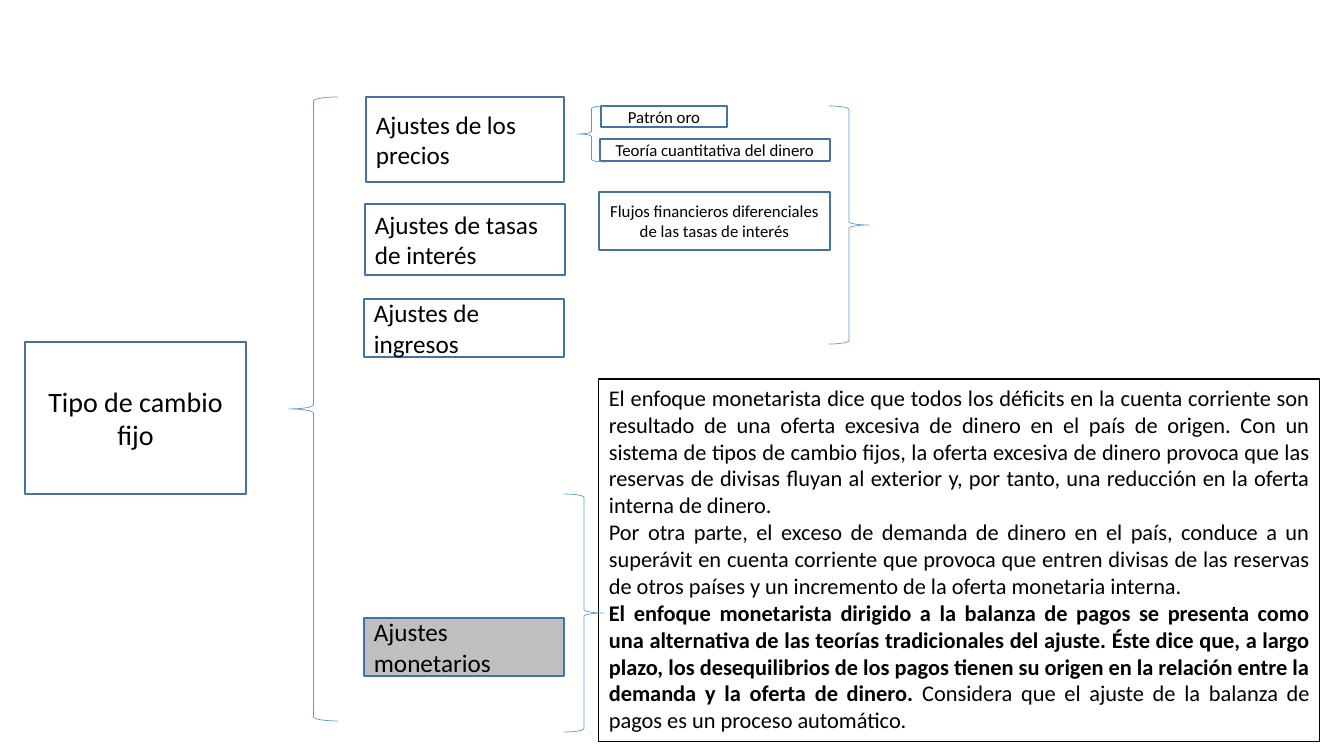
"""Build the slide on adjustment mechanisms under a fixed exchange rate."""
from pptx import Presentation
from pptx.dml.color import RGBColor
from pptx.enum.shapes import MSO_SHAPE as Shape
from pptx.enum.text import MSO_ANCHOR as Anchor, PP_ALIGN as Align
from pptx.util import Emu, Pt

EMU_PER_PX = 914400 / 100.8
FONT = "Calibri"
WHITE = RGBColor(0xFF, 0xFF, 0xFF)
GRAY = RGBColor(0xBF, 0xBF, 0xBF)
BLACK = RGBColor(0, 0, 0)
BOX_BLUE = RGBColor(0x43, 0x73, 0x9E)
BRACE_BLUE = RGBColor(0x5B, 0x9B, 0xD5)

BOXES = [
    ("Tipo de cambio fijo", (25, 342, 221, 152), 20, Align.CENTER, WHITE),
    ("Ajustes de los precios", (366, 97, 198, 85), 18, Align.LEFT, WHITE),
    ("Ajustes de tasas de interés", (365, 204, 200, 71), 18, Align.LEFT, WHITE),
    ("Ajustes de ingresos", (364, 299, 200, 58), 18, Align.LEFT, WHITE),
    ("Ajustes monetarios", (364, 618, 200, 58), 18, Align.LEFT, GRAY),
    ("Patrón oro", (601, 106, 126, 21), 12, Align.CENTER, WHITE),
    ("Teoría cuantitativa del dinero", (600, 139, 230, 22), 12, Align.CENTER, WHITE),
    ("Flujos financieros diferenciales de las tasas de interés",
     (599, 192, 231, 58), 12, Align.CENTER, WHITE),
]
BRACES = [
    (Shape.LEFT_BRACE, (289, 97, 49, 624)),
    (Shape.LEFT_BRACE, (577, 106, 29, 56)),
    (Shape.RIGHT_BRACE, (829, 106, 40, 238)),
    (Shape.RIGHT_BRACE, (564, 494, 40, 238)),
]
EXPLANATION_PLACE = (599, 379, 721, 363)
EXPLANATION = [
    [("El enfoque monetarista dice que todos los déficits en la cuenta corriente "
      "son resultado de una oferta excesiva de dinero en el país de origen. Con un "
      "sistema de tipos de cambio fijos, la oferta excesiva de dinero provoca que "
      "las reservas de divisas fluyan al exterior y, por tanto, una reducción en la "
      "oferta interna de dinero.", False)],
    [("Por otra parte, el exceso de demanda de dinero en el país, conduce a un "
      "superávit en cuenta corriente que provoca que entren divisas de las reservas "
      "de otros países y un incremento de la oferta monetaria interna.", False)],
    [("El enfoque monetarista dirigido a la balanza de pagos se presenta como una "
      "alternativa de las teorías tradicionales del ajuste. Éste dice que, a largo "
      "plazo, los desequilibrios de los pagos tienen su origen en la relación entre "
      "la demanda y la oferta de dinero. ", True),
     ("Considera que el ajuste de la balanza de pagos es un proceso automático.",
      False)],
]


def px(*lengths):
    return [Emu(round(length * EMU_PER_PX)) for length in lengths]


def add_outline(slide, kind, place, color, width, fill=None):
    shape = slide.shapes.add_shape(kind, *px(*place))
    shape.shadow.inherit = False
    if fill is None:
        shape.fill.background()
    else:
        shape.fill.solid()
        shape.fill.fore_color.rgb = fill
    shape.line.color.rgb = color
    shape.line.width = Pt(width)
    return shape


def write(shape, paragraphs, size, align, anchor):
    frame = shape.text_frame
    frame.word_wrap = True
    frame.vertical_anchor = anchor
    for index, pieces in enumerate(paragraphs):
        paragraph = frame.add_paragraph() if index else frame.paragraphs[0]
        paragraph.alignment = align
        for text, bold in pieces:
            run = paragraph.add_run()
            run.text = text
            run.font.name = FONT
            run.font.size = Pt(size)
            run.font.bold = bold
            run.font.color.rgb = BLACK


def main():
    presentation = Presentation()
    presentation.slide_width, presentation.slide_height = px(1344, 756)
    slide = presentation.slides.add_slide(presentation.slide_layouts[6])
    for text, place, size, align, fill in BOXES:
        box = add_outline(slide, Shape.RECTANGLE, place, BOX_BLUE, 1, fill)
        write(box, [[(text, False)]], size, align, Anchor.MIDDLE)
    explanation = add_outline(slide, Shape.RECTANGLE, EXPLANATION_PLACE, BLACK, 0.75)
    write(explanation, EXPLANATION, 16, Align.JUSTIFY, Anchor.TOP)
    for kind, place in BRACES:
        add_outline(slide, kind, place, BRACE_BLUE, 0.5)
    presentation.save("out.pptx")


if __name__ == "__main__":
    main()
